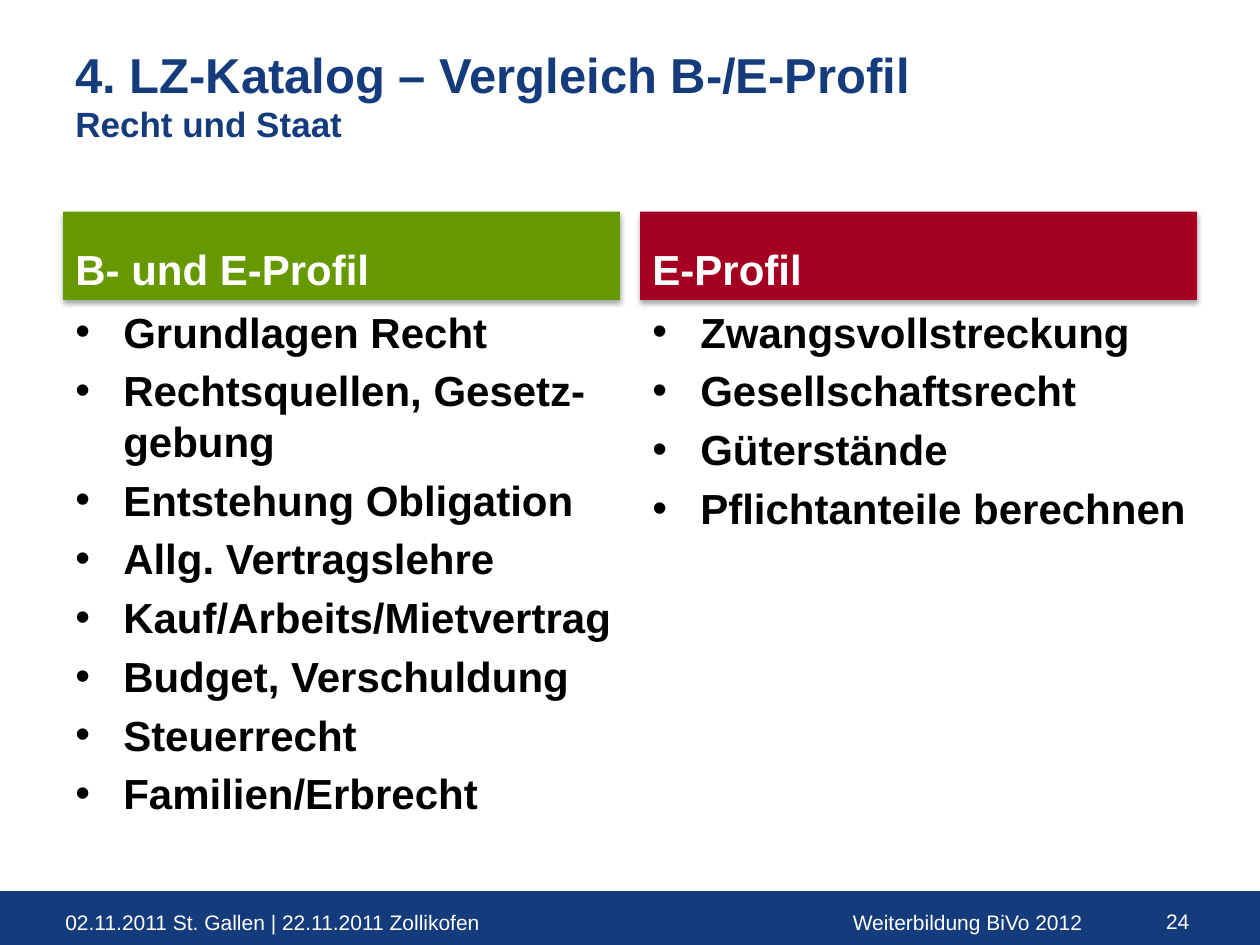
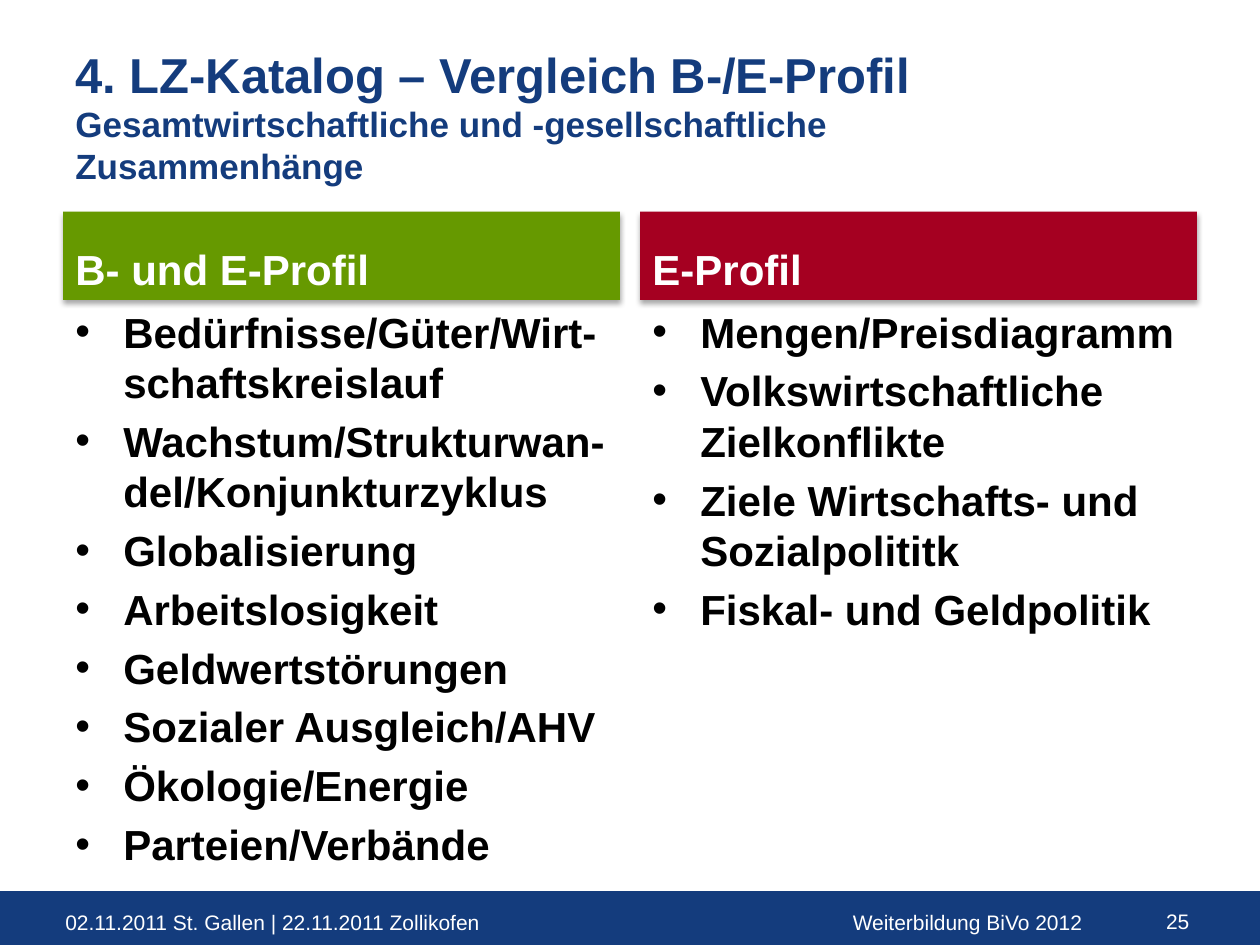
from dataclasses import dataclass

from lxml import etree
from pptx import Presentation
from pptx.dml.color import RGBColor
from pptx.enum.shapes import MSO_SHAPE as Shape
from pptx.enum.text import MSO_ANCHOR as Anchor, PP_ALIGN as Align
from pptx.oxml import parse_xml
from pptx.oxml.ns import nsdecls, qn
from pptx.util import Inches, Pt


@dataclass(frozen=True)
class Theme:
    font: str = "Arial"
    navy: RGBColor = RGBColor(0x14, 0x3C, 0x7D)
    green: RGBColor = RGBColor(0x66, 0x99, 0x00)
    red: RGBColor = RGBColor(0xA5, 0x00, 0x21)
    white: RGBColor = RGBColor(0xFF, 0xFF, 0xFF)
    black: RGBColor = RGBColor(0x00, 0x00, 0x00)
    title_size: int = 28
    subtitle_size: int = 20
    body_size: int = 24
    footer_size: int = 12
    bullet_gap: float = 4.8
    bullet_indent: float = 0.38


THEME = Theme()
TITLE = "4. LZ-Katalog – Vergleich B-/E-Profil"
DATES = "02.11.2011 St. Gallen | 22.11.2011 Zollikofen"
EVENT = "Weiterbildung BiVo 2012"
FIRST_PAGE_NUMBER = 24

# Heading, colour, left edge and list width of each column
COLUMNS = [
    ("B- und E-Profil", THEME.green, 0.5, 4.58),
    ("E-Profil", THEME.red, 5.08, 4.72),
]

# Subtitle, then one list of topics for each column
PAGES = [
    (
        "Recht und Staat",
        [
            [
                "Grundlagen Recht",
                "Rechtsquellen, Gesetz-gebung",
                "Entstehung Obligation",
                "Allg. Vertragslehre",
                "Kauf/Arbeits/Mietvertrag",
                "Budget, Verschuldung",
                "Steuerrecht",
                "Familien/Erbrecht",
            ],
            [
                "Zwangsvollstreckung",
                "Gesellschaftsrecht",
                "Güterstände",
                "Pflichtanteile berechnen",
            ],
        ],
    ),
    (
        "Gesamtwirtschaftliche und -gesellschaftliche\vZusammenhänge",
        [
            [
                "Bedürfnisse/Güter/Wirt-schaftskreislauf",
                "Wachstum/Strukturwan-del/Konjunkturzyklus",
                "Globalisierung",
                "Arbeitslosigkeit",
                "Geldwertstörungen",
                "Sozialer Ausgleich/AHV",
                "Ökologie/Energie",
                "Parteien/Verbände",
            ],
            [
                "Mengen/Preisdiagramm",
                "Volkswirtschaftliche Zielkonflikte",
                "Ziele Wirtschafts- und Sozialpolititk",
                "Fiskal- und Geldpolitik",
            ],
        ],
    ),
]


def style(para, size, color, bold=False):
    font = para.font
    font.name, font.size, font.bold = THEME.font, Pt(size), bold
    font.color.rgb = color


def add_text_frame(page, left, top, width, height):
    box = page.shapes.add_textbox(
        Inches(left), Inches(top), Inches(width), Inches(height)
    )
    box.text_frame.word_wrap = True
    return box.text_frame


def add_bar(page, left, top, width, height, color):
    bar = page.shapes.add_shape(
        Shape.RECTANGLE, Inches(left), Inches(top), Inches(width), Inches(height)
    )
    bar.shadow.inherit = False
    bar.fill.solid()
    bar.fill.fore_color.rgb = color
    bar.line.fill.background()
    return bar


def add_soft_shadow(shape):
    effects = shape._element.spPr.find(qn("a:effectLst"))
    effects.append(parse_xml(
        f'<a:outerShdw {nsdecls("a")} blurRad="{Pt(3.1)}" dist="{Pt(1.8)}" '
        'dir="5400000" rotWithShape="0"><a:srgbClr val="000000">'
        '<a:alpha val="35000"/></a:srgbClr></a:outerShdw>'
    ))


def add_bullet(para):
    indent = Inches(THEME.bullet_indent)
    properties = para._p.get_or_add_pPr()
    properties.set("marL", str(indent))
    properties.set("indent", str(-indent))
    etree.SubElement(properties, qn("a:buFont"), typeface=THEME.font)
    etree.SubElement(properties, qn("a:buChar"), char="•")


def add_title(page, subtitle):
    frame = add_text_frame(page, 0.5, 0.3, 9, 1.25)
    para = frame.paragraphs[0]
    para.text = f"{TITLE}\v{subtitle}"
    style(para, THEME.subtitle_size, THEME.navy, bold=True)
    para.runs[0].font.size = Pt(THEME.title_size)


def add_heading(page, text, color, left):
    bar = add_bar(page, left, 1.68, 4.42, 0.7, color)
    add_soft_shadow(bar)
    frame = bar.text_frame
    frame.word_wrap = True
    frame.vertical_anchor = Anchor.BOTTOM
    para = frame.paragraphs[0]
    para.text = text
    para.alignment = Align.LEFT
    style(para, THEME.body_size, THEME.white, bold=True)


def add_topics(page, topics, left, width):
    frame = add_text_frame(page, left, 2.38, width, 4.32)
    for index, topic in enumerate(topics):
        para = frame.add_paragraph() if index else frame.paragraphs[0]
        para.text = topic
        add_bullet(para)
        if index:
            para.space_before = Pt(THEME.bullet_gap)
        style(para, THEME.body_size, THEME.black, bold=True)


def add_footer_text(page, text, left, top, width, alignment=Align.LEFT):
    frame = add_text_frame(page, left, top, width, 0.33)
    para = frame.paragraphs[0]
    para.text = text
    para.alignment = alignment
    style(para, THEME.footer_size, THEME.white)
    return frame


def add_footer(page, number):
    band = add_bar(page, -0.04, 7.08, 10.04, 0.42, THEME.navy)
    band.line.color.rgb = THEME.navy
    band.line.width = Pt(0.75)
    add_footer_text(page, DATES, 0.42, 7.17, 4.74)
    add_footer_text(page, EVENT, 6.67, 7.17, 2.33)
    number_frame = add_footer_text(page, str(number), 9, 7.16, 0.58, Align.RIGHT)
    number_frame.margin_right = Inches(0.14)


def main():
    deck = Presentation()
    deck.slide_width, deck.slide_height = Inches(10), Inches(7.5)
    blank = deck.slide_layouts[6]
    for number, (subtitle, topic_lists) in enumerate(PAGES, FIRST_PAGE_NUMBER):
        page = deck.slides.add_slide(blank)
        add_footer(page, number)
        add_title(page, subtitle)
        for (heading, color, left, width), topics in zip(COLUMNS, topic_lists):
            add_heading(page, heading, color, left)
            add_topics(page, topics, left, width)
    deck.save("out.pptx")


if __name__ == "__main__":
    main()
